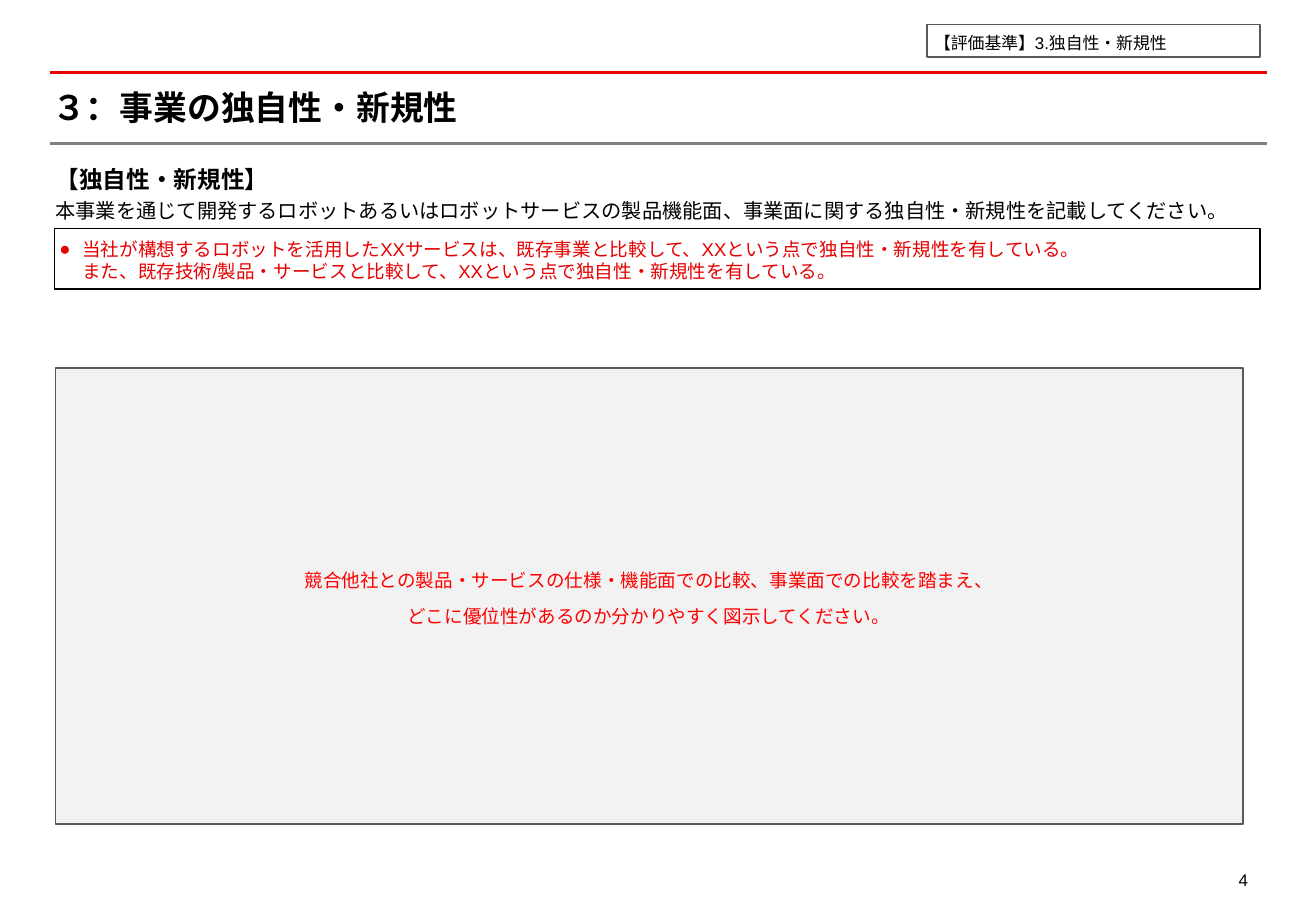
from copy import deepcopy

from lxml import etree
from pptx import Presentation, oxml
from pptx import util as u
from pptx.dml.color import RGBColor
from pptx.enum import shapes, text
from pptx.oxml.ns import qn

FONT = "Arial"
BLACK = RGBColor(0x00, 0x00, 0x00)
WHITE = RGBColor(0xFF, 0xFF, 0xFF)
ACCENT = RGBColor(0xE6, 0x00, 0x00)
PROMPT = RGBColor(0xFF, 0x00, 0x00)
RULE_GRAY = RGBColor(0x80, 0x80, 0x80)
BORDER_GRAY = RGBColor(0x59, 0x59, 0x59)
PANEL_GRAY = RGBColor(0xF2, 0xF2, 0xF2)
LEFT, ANCHOR_MIDDLE = text.PP_ALIGN.LEFT, text.MSO_ANCHOR.MIDDLE


def add_run(paragraph, words, size, color=BLACK, bold=False):
    """Add one run in the slide font, for Latin and Japanese letters alike."""
    run = paragraph.add_run()
    run.text = words
    run.font.size = u.Pt(size)
    run.font.bold = bold
    run.font.color.rgb = color
    run.font.name = FONT
    etree.SubElement(run.font._element, qn("a:ea"), typeface=FONT)
    return run


def set_frame(shape, insets, anchor=text.MSO_ANCHOR.TOP, wrap=True):
    """Set insets (left, top, right, bottom in cm), anchor and wrapping."""
    frame = shape.text_frame
    frame.margin_left, frame.margin_top, frame.margin_right, frame.margin_bottom = map(u.Cm, insets)
    frame.vertical_anchor = anchor
    frame.word_wrap = wrap
    return frame


def add_lines(frame, lines, spacing=1.2, before=0, align=LEFT):
    """Write one paragraph for each (words, size, color, bold) entry."""
    for index, line in enumerate(lines):
        paragraph = frame.add_paragraph() if index else frame.paragraphs[0]
        paragraph.alignment = align
        paragraph.line_spacing = spacing
        paragraph.space_before = u.Pt(before if index else 0)
        add_run(paragraph, *line)


def add_textbox(slide, box):
    """Add a text box at a box given in cm."""
    return slide.shapes.add_textbox(*map(u.Cm, box))


def add_box(slide, box, fill, border):
    """Add a bordered rectangle; no fill colour leaves it clear."""
    shape = slide.shapes.add_shape(shapes.MSO_SHAPE.RECTANGLE, *map(u.Cm, box))
    shape.shadow.inherit = False
    if fill is None:
        shape.fill.background()
    else:
        shape.fill.solid()
        shape.fill.fore_color.rgb = fill
    shape.line.color.rgb = border
    shape.line.width = u.Pt(1)
    return shape


def add_rule(slide, left, top, width, color, weight):
    """Draw a horizontal rule."""
    rule = slide.shapes.add_connector(
        shapes.MSO_CONNECTOR.STRAIGHT, u.Cm(left), u.Cm(top), u.Cm(left + width), u.Cm(top))
    rule.line.color.rgb = color
    rule.line.width = u.Pt(weight)
    etree.SubElement(rule._element.spPr, qn("a:effectLst"))


def add_header(slide, box):
    """Place the title between the red and the gray rule."""
    left, top, width, height = box
    add_rule(slide, left, top, width, ACCENT, 2)
    add_rule(slide, left, top + height, width, RULE_GRAY, 1.25)
    title = add_textbox(slide, (left + 0.05, top + 0.28, width, 0.86))
    frame = set_frame(title, (0, 0, 0, 0), ANCHOR_MIDDLE)
    add_lines(frame, [("３：事業の独自性・新規性", 20, BLACK, True)], spacing=1)


def add_criterion(slide, box):
    """Place the evaluation criterion label."""
    shape = add_box(slide, box, None, BORDER_GRAY)
    frame = set_frame(shape, (0.05, 0.05, 0.05, 0.05), ANCHOR_MIDDLE, wrap=False)
    add_lines(frame, [(" 【評価基準】3.独自性・新規性", 10)])


def add_instruction(slide, box):
    """Place the section heading and its instruction."""
    frame = set_frame(add_textbox(slide, box), (0, 0, 0, 0))
    add_lines(frame, [
        ("【独自性・新規性】", 14, BLACK, True),
        ("本事業を通じて開発するロボットあるいはロボットサービスの製品機能面、"
         "事業面に関する独自性・新規性を記載してください。", 12),
    ])


def add_answer(slide, box):
    """Place the bulleted sample answer."""
    frame = set_frame(add_box(slide, box, WHITE, BLACK), (0.1, 0.2, 0.05, 0.05))
    paragraph = frame.paragraphs[0]
    paragraph.alignment = LEFT
    first = add_run(
        paragraph, "当社が構想するロボットを活用したXXサービスは、既存事業と比較して、"
        "XXという点で独自性・新規性を有している。", 11, ACCENT)
    paragraph.add_line_break()
    paragraph._p.find(qn("a:br")).append(deepcopy(first.font._element))
    add_run(paragraph, "また、既存技術/製品・サービスと比較して、"
            "XXという点で独自性・新規性を有している。", 11, ACCENT)
    properties = paragraph._p.get_or_add_pPr()
    indent = u.Cm(0.48)
    properties.set("marL", str(indent))
    properties.set("indent", str(-indent))
    color = etree.SubElement(properties, qn("a:buClr"))
    etree.SubElement(color, qn("a:srgbClr"), val=str(ACCENT))
    etree.SubElement(properties, qn("a:buFont"), typeface=FONT)
    etree.SubElement(properties, qn("a:buChar"), char="●")


def add_diagram_panel(slide, box):
    """Place the panel that asks for a comparison diagram."""
    shape = add_box(slide, box, PANEL_GRAY, BORDER_GRAY)
    frame = set_frame(shape, (0.05, 0.05, 0.05, 0.05), ANCHOR_MIDDLE, wrap=False)
    add_lines(frame, [
        ("競合他社との製品・サービスの仕様・機能面での比較、事業面での比較を踏まえ、", 11, PROMPT),
        ("どこに優位性があるのか分かりやすく図示してください。", 11, PROMPT),
    ], before=5.5, align=text.PP_ALIGN.CENTER)


def add_page_number(slide, box):
    """Place the page number."""
    frame = set_frame(add_textbox(slide, box), (0.25, 0.13, 0.25, 0.13))
    add_lines(frame, [("4", 10)], align=text.PP_ALIGN.RIGHT)


def main():
    """Build the slide and save it."""
    presentation = Presentation()
    presentation.slide_width, presentation.slide_height = u.Cm(27.51), u.Cm(19.05)
    slide = presentation.slides.add_slide(presentation.slide_layouts[6])
    add_header(slide, (1.04, 1.52, 25.44, 1.48))
    add_criterion(slide, (19.38, 0.51, 6.96, 0.69))
    add_instruction(slide, (1.16, 3.33, 25.18, 1.27))
    add_answer(slide, (1.14, 4.78, 25.2, 1.27))
    add_diagram_panel(slide, (1.16, 7.7, 24.82, 9.53))
    add_page_number(slide, (25.22, 17.98, 1.12, 0.71))
    presentation.save("out.pptx")


if __name__ == "__main__":
    main()
